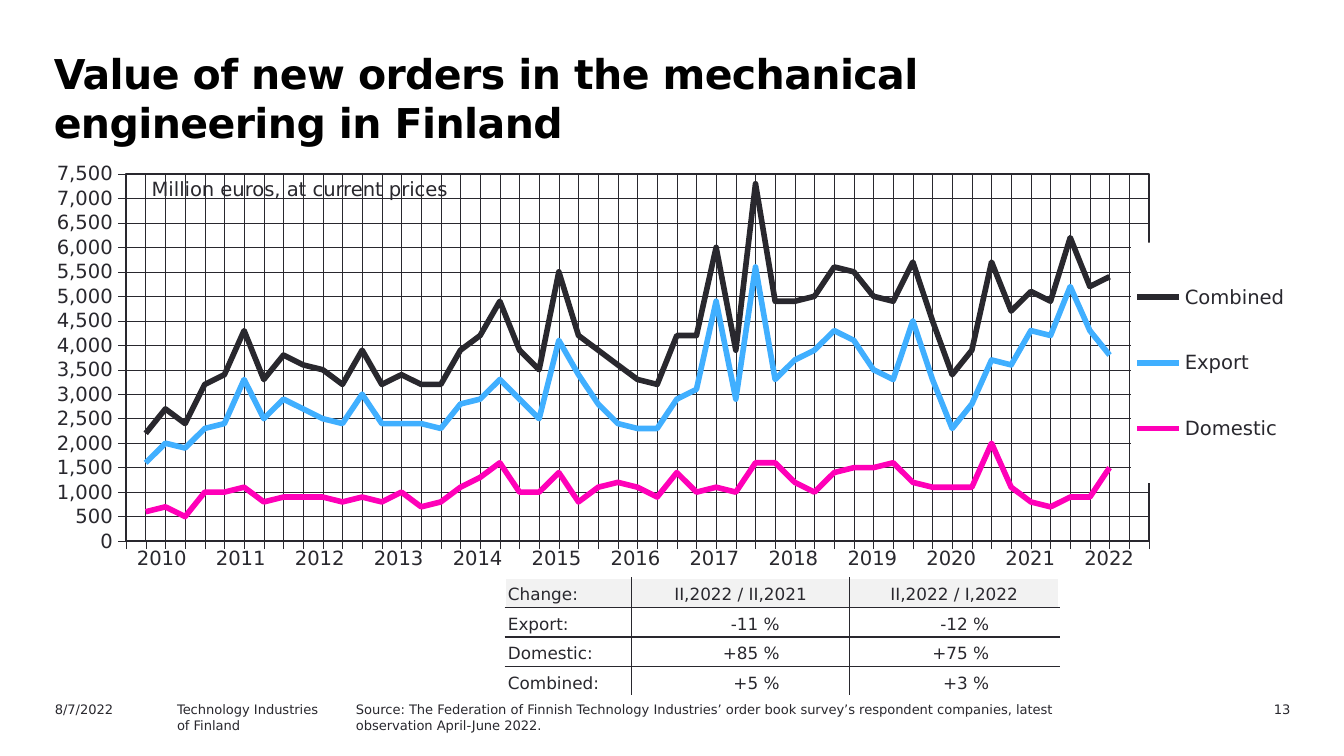
"""Build the slide on new orders in Finnish mechanical engineering."""
from dataclasses import dataclass

from pptx import Presentation
from pptx import oxml as ox
from pptx import util as u
from pptx.chart import data as chart_data
from pptx.dml.color import RGBColor
from pptx.enum import chart as ec
from pptx.enum import dml, text
from pptx.oxml import ns

Pt = u.Pt
FONT = "DejaVu Sans"
INK = RGBColor(0x29, 0x28, 0x2E)
BLACK = RGBColor(0, 0, 0)
WHITE = RGBColor(0xFF, 0xFF, 0xFF)
HEADER_GREY = RGBColor(0xF2, 0xF2, 0xF2)
SKY = RGBColor(0x40, 0xAF, 0xFF)
MAGENTA = RGBColor(0xFF, 0x00, 0xB8)
LEFT, CENTER, RIGHT = text.PP_ALIGN.LEFT, text.PP_ALIGN.CENTER, text.PP_ALIGN.RIGHT
PLAIN_TABLE = "{2D5ABB26-0587-4C30-8999-92F81FD0307C}"


@dataclass(frozen=True)
class Box:
    left: float
    top: float
    width: float
    height: float

    def lengths(self) -> list:
        return [Pt(v) for v in (self.left, self.top, self.width, self.height)]


@dataclass(frozen=True)
class Note:
    box: Box
    lines: tuple
    size: float = 7
    align: int = LEFT
    wrap: bool = True


@dataclass(frozen=True)
class Orders:
    name: str
    color: RGBColor
    hundreds: tuple


TITLE = "Value of new orders in the mechanical engineering in Finland"
NOTES = (
    Note(Box(74.2, 91.4, 175.7, 19.4), ("Million euros, at current prices",), 10.5, wrap=False),
    Note(Box(630.7, 372.2, 67.7, 13), ("13",), align=RIGHT),
    Note(Box(183.6, 372.2, 391.7, 13), (
        "Source: The Federation of Finnish Technology Industries’ order book survey’s "
        "respondent companies, latest observation April-June 2022.",)),
    Note(Box(87.8, 372.2, 129.6, 13), ("Technology Industries", "of Finland")),
    Note(Box(22.3, 372.2, 72, 13), ("8/7/2022",)),
)
ORDERS = (
    Orders("Combined", INK, (
        22, 27, 24, 32, 34, 43, 33, 38, 36, 35, 32, 39, 32, 34, 32, 32, 39, 42, 49, 39, 35, 55, 42, 39, 36,
        33, 32, 42, 42, 60, 39, 73, 49, 49, 50, 56, 55, 50, 49, 57, 45, 34, 39, 57, 47, 51, 49, 62, 52, 54)),
    Orders("Export", SKY, (
        16, 20, 19, 23, 24, 33, 25, 29, 27, 25, 24, 30, 24, 24, 24, 23, 28, 29, 33, 29, 25, 41, 34, 28, 24,
        23, 23, 29, 31, 49, 29, 56, 33, 37, 39, 43, 41, 35, 33, 45, 33, 23, 28, 37, 36, 43, 42, 52, 43, 38)),
    Orders("Domestic", MAGENTA, (
        6, 7, 5, 10, 10, 11, 8, 9, 9, 9, 8, 9, 8, 10, 7, 8, 11, 13, 16, 10, 10, 14, 8, 11, 12,
        11, 9, 14, 10, 11, 10, 16, 16, 12, 10, 14, 15, 15, 16, 12, 11, 11, 11, 20, 11, 8, 7, 9, 9, 15)),
)
CHANGES = (
    ("Change:", "II,2022 / II,2021", "II,2022 / I,2022"),
    ("Export:", "-11 %", "-12 %"),
    ("Domestic:", "+85 %", "+75 %"),
    ("Combined:", "+5 %", "+3 %"),
)
YEARS = tuple(str(year) for year in range(2010, 2023))


def style_font(font, size: float, color: RGBColor = INK, bold: bool = False) -> None:
    font.name, font.size, font.bold = FONT, Pt(size), bold
    font.color.rgb = color


def write(paragraph, words: str, size: float, align: int = LEFT) -> None:
    paragraph.alignment = align
    run = paragraph.add_run()
    run.text = words
    style_font(run.font, size)


def add_title(slide) -> None:
    title = slide.shapes.title
    title.left, title.top, title.width, title.height = Box(20.2, 22.3, 629.3, 51.1).lengths()
    frame = title.text_frame
    frame.vertical_anchor = text.MSO_ANCHOR.TOP
    frame.auto_size = text.MSO_AUTO_SIZE.NONE
    frame.margin_left = Pt(8.6)
    paragraph = frame.paragraphs[0]
    write(paragraph, TITLE, 22)
    font = paragraph.runs[0].font
    style_font(font, 22, BLACK, True)
    paragraph.runs[0]._r.get_or_add_rPr().set("spc", "-30")


def add_note(slide, note: Note) -> None:
    frame = slide.shapes.add_textbox(*note.box.lengths()).text_frame
    frame.word_wrap = note.wrap
    for index, line in enumerate(note.lines):
        paragraph = frame.add_paragraph() if index else frame.paragraphs[0]
        write(paragraph, line, note.size, note.align)


def chart_xml(markup: str):
    head, rest = markup.split(">", 1)
    return ox.parse_xml(f"{head} {ns.nsdecls('c', 'a')}>{rest}")


def manual_layout(x: float, y: float, w: float, h: float, target: str = ""):
    return chart_xml(
        f'<c:layout><c:manualLayout>{target}<c:xMode val="edge"/><c:yMode val="edge"/>'
        f'<c:x val="{x}"/><c:y val="{y}"/><c:w val="{w}"/><c:h val="{h}"/>'
        "</c:manualLayout></c:layout>")


def drop(parent, tag: str) -> None:
    for child in parent.findall(ns.qn(tag)):
        parent.remove(child)


def style_axis(axis) -> None:
    axis.has_major_gridlines = True
    axis.major_tick_mark = ec.XL_TICK_MARK.OUTSIDE
    axis.minor_tick_mark = ec.XL_TICK_MARK.NONE
    grid = axis.major_gridlines.format.line
    for line, width in ((axis.format.line, 0.22), (grid, 0.25)):
        line.color.rgb, line.width = INK, Pt(width)
    grid.dash_style = dml.MSO_LINE.ROUND_DOT


def place_chart_parts(chart) -> None:
    plot_area = chart._chartSpace.chart.plotArea
    drop(plot_area, "c:layout")
    plot_area.insert(0, manual_layout(0.082, 0.041, 0.802, 0.833, '<c:layoutTarget val="inner"/>'))
    plot_area.append(chart_xml(
        f'<c:spPr><a:noFill/><a:ln w="{Pt(1)}"><a:solidFill><a:srgbClr val="{INK}"/>'
        "</a:solidFill></a:ln></c:spPr>"))
    value_axis = plot_area.find(ns.qn("c:valAx"))
    drop(value_axis, "c:crossBetween")
    value_axis.find(ns.qn("c:crosses")).addnext(chart_xml('<c:crossBetween val="midCat"></c:crossBetween>'))
    legend = chart.legend._element
    drop(legend, "c:layout")
    legend.find(ns.qn("c:legendPos")).addnext(manual_layout(0.87, 0.197, 0.125, 0.545))
    legend.find(ns.qn("c:overlay")).addnext(chart_xml(
        f'<c:spPr><a:solidFill><a:srgbClr val="{WHITE}"/></a:solidFill><a:ln><a:noFill/></a:ln></c:spPr>'))


def add_orders_chart(slide) -> None:
    data = chart_data.CategoryChartData(number_format="#,##0")
    data.categories = [str(quarter) for quarter in range(1, 54)]
    for orders in ORDERS:
        data.add_series(orders.name, [None, *(100 * v for v in orders.hundreds), None, None])
    box = Box(11.5, 83.5, 683.3, 236.2)
    chart = slide.shapes.add_chart(ec.XL_CHART_TYPE.LINE, *box.lengths(), data).chart
    style_font(chart.font, 10.5)
    chart.has_title = False
    chart.has_legend = True
    chart.legend.position = ec.XL_LEGEND_POSITION.RIGHT
    chart.legend.include_in_layout = False
    style_font(chart.legend.font, 10.5)
    chart.plots[0].vary_by_categories = False
    for series, orders in zip(chart.plots[0].series, ORDERS):
        series.smooth = False
        series.format.line.color.rgb, series.format.line.width = orders.color, Pt(3)
    quarters, euros = chart.category_axis, chart.value_axis
    style_axis(quarters)
    style_axis(euros)
    quarters.tick_label_position = ec.XL_TICK_LABEL_POSITION.NONE
    euros.minimum_scale, euros.maximum_scale, euros.major_unit = 0, 7500, 500
    euros.tick_labels.number_format = "#,##0"
    euros.tick_labels.number_format_is_linked = False
    style_font(euros.tick_labels.font, 10.5)
    place_chart_parts(chart)


def add_plain_table(slide, rows: int, widths: list, box: Box):
    table = slide.shapes.add_table(rows, len(widths), *box.lengths()).table
    table.first_row = table.horz_banding = False
    table._tbl.tblPr.find(ns.qn("a:tableStyleId")).text = PLAIN_TABLE
    for column, width in zip(table.columns, widths):
        column.width = Pt(width)
    for row in table.rows:
        row.height = Pt(box.height / rows)
    return table


def add_border(cell, side: str, color: RGBColor) -> None:
    cell._tc.get_or_add_tcPr().append(ox.parse_xml(
        f'<a:ln{side} {ns.nsdecls("a")} w="{Pt(1)}"><a:solidFill><a:srgbClr val="{color}"/>'
        f"</a:solidFill></a:ln{side}>"))


def add_change_table(slide) -> None:
    table = add_plain_table(slide, len(CHANGES), [67.7, 116.6, 112.3], Box(270.7, 309.6, 296.6, 63.4))
    last_row, last_col = len(CHANGES) - 1, len(CHANGES[0]) - 1
    for r, row in enumerate(CHANGES):
        for c, words in enumerate(row):
            cell = table.cell(r, c)
            figure = r > 0 and c > 0
            cell.vertical_anchor = text.MSO_ANCHOR.BOTTOM
            cell.margin_left = cell.margin_top = cell.margin_bottom = Pt(1.4)
            cell.margin_right = Pt(37.4 if figure else 1.4)
            write(cell.text_frame.paragraphs[0], words, 9, RIGHT if figure else CENTER if c else LEFT)
            outer = {"L": c == 0, "R": c == last_col, "T": r == 0, "B": r == last_row}
            for side, is_outer in outer.items():
                add_border(cell, side, WHITE if is_outer else INK)
            cell.fill.solid()
            cell.fill.fore_color.rgb = WHITE if r else HEADER_GREY


def add_year_table(slide) -> None:
    width = 550
    table = add_plain_table(slide, 1, [width / len(YEARS)] * len(YEARS), Box(65.5, 289.4, width, 22.3))
    for cell, year in zip(table.rows[0].cells, YEARS):
        cell.fill.background()
        write(cell.text_frame.paragraphs[0], year, 10.5, CENTER)


def main() -> None:
    deck = Presentation()
    deck.slide_width, deck.slide_height = Pt(720), Pt(405)
    slide = deck.slides.add_slide(deck.slide_layouts[5])
    add_title(slide)
    add_orders_chart(slide)
    add_change_table(slide)
    for note in NOTES:
        add_note(slide, note)
    add_year_table(slide)
    deck.save("out.pptx")


if __name__ == "__main__":
    main()
